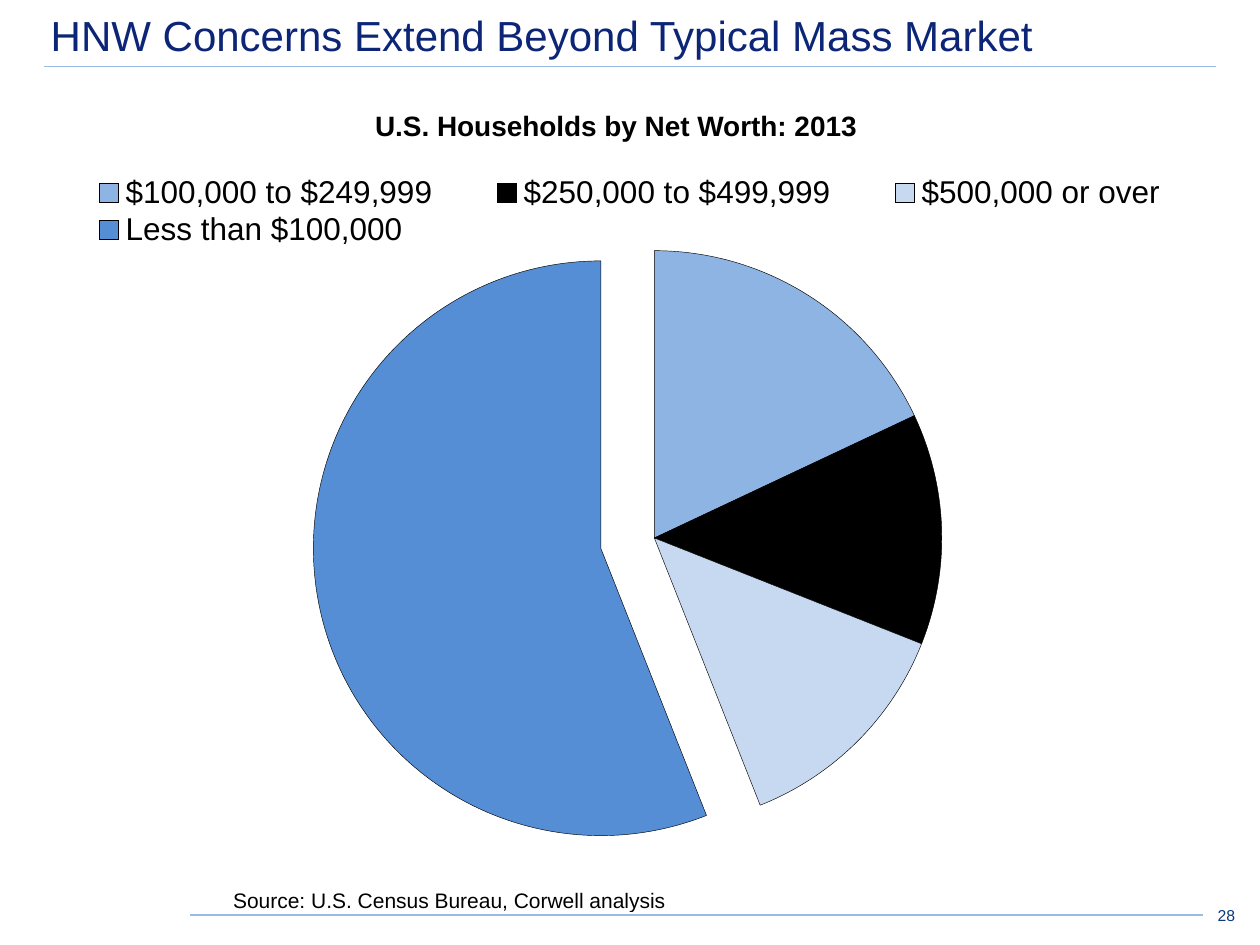
import pptx
import pptx.util
import pptx.chart.data
import pptx.dml.color
import pptx.enum.chart
import pptx.enum.shapes
import pptx.enum.text
import pptx.oxml
import pptx.oxml.ns

Pt = pptx.util.Pt
Align = pptx.enum.text.PP_ALIGN
Anchor = pptx.enum.text.MSO_ANCHOR
NS = pptx.oxml.ns.nsdecls("a")
CNS = pptx.oxml.ns.nsdecls("c")


def paint(hue):
    """Return the colour for a hex string."""
    return pptx.dml.color.RGBColor.from_string(hue)


def write(para, text, size, hue, bold=False):
    """Add one styled run to a paragraph."""
    run = para.add_run()
    run.text = text
    run.font.name = "Arial"
    run.font.size = Pt(size)
    run.font.bold = bold
    run.font.color.rgb = paint(hue)


def add_text(slide, box, text, size, hue, align, anchor, pad):
    """Add a wrapped text box with side and top insets."""
    frame = slide.shapes.add_textbox(*map(Pt, box)).text_frame
    frame.word_wrap = True
    frame.vertical_anchor = anchor
    frame.margin_left = frame.margin_right = Pt(pad)
    frame.margin_top = frame.margin_bottom = Pt(3.6)
    para = frame.paragraphs[0]
    para.alignment = align
    write(para, text, size, hue)


def add_rule(slide, left, right, top, width):
    """Add a level pale blue line."""
    kind = pptx.enum.shapes.MSO_CONNECTOR.STRAIGHT
    line = slide.shapes.add_connector(kind, Pt(left), Pt(top), Pt(right), Pt(top))
    line.line.color.rgb = paint("96BDE1")
    line.line.width = Pt(width)
    line._element.spPr.append(pptx.oxml.parse_xml(f"<a:effectLst {NS}/>"))


def add_strip(slide, box, text, size, align, bold=False):
    """Add a one-cell table with white borders."""
    table = slide.shapes.add_table(1, 1, *map(Pt, box)).table
    table.first_row = table.horz_banding = False
    cell = table.cell(0, 0)
    cell.margin_top = cell.margin_bottom = 0
    cell.margin_left = cell.margin_right = Pt(7.2)
    props = cell._tc.get_or_add_tcPr()
    for side in ("lnL", "lnR", "lnT", "lnB"):
        props.append(pptx.oxml.parse_xml(
            f'<a:{side} {NS} w="12700"><a:solidFill>'
            f'<a:srgbClr val="FFFFFF"/></a:solidFill></a:{side}>'))
    cell.fill.background()
    para = cell.text_frame.paragraphs[0]
    para.alignment = align
    para.line_spacing = Pt(18)
    write(para, text, size, "000000", bold)


def place(part, index, box, target=""):
    """Fix a chart part at a box given as shares of the chart."""
    for old in part.findall(pptx.oxml.ns.qn("c:layout")):
        part.remove(old)
    spots = "".join(f'<c:{key} val="{val}"/>' for key, val in zip("xywh", box))
    part.insert(index, pptx.oxml.parse_xml(
        f'<c:layout {CNS}><c:manualLayout>{target}<c:xMode val="edge"/>'
        f'<c:yMode val="edge"/>{spots}</c:manualLayout></c:layout>'))


def burst(series, index, share):
    """Pull one slice out of the pie."""
    point = series._element.get_or_add_dPt_for_point(index)
    mark = pptx.oxml.parse_xml(f'<c:explosion {CNS} val="{share}"/>')
    point.find(pptx.oxml.ns.qn("c:spPr")).addprevious(mark)


def add_pie(slide, box, slices):
    """Add the net worth pie from (label, value, hue) slices."""
    data = pptx.chart.data.CategoryChartData()
    data.categories = [label for label, _, _ in slices]
    data.add_series("Series 1", [value for _, value, _ in slices])
    kind = pptx.enum.chart.XL_CHART_TYPE.PIE
    chart = slide.shapes.add_chart(kind, *map(Pt, box), data).chart
    chart.has_title = False
    chart.font.name = "Arial"
    chart.font.size = Pt(6)
    chart.font.color.rgb = paint("000000")
    chart.has_legend = True
    legend = chart.legend
    legend.position = pptx.enum.chart.XL_LEGEND_POSITION.TOP
    legend.include_in_layout = False
    legend.font.name = "Arial"
    legend.font.size = Pt(18)
    legend.font.color.rgb = paint("000000")
    place(legend._element, 1, (0, 0.04, 1, 0.11))
    chart.plots[0].vary_by_categories = True
    series = chart.plots[0].series[0]
    for index, (_, _, hue) in enumerate(slices):
        style = series.points[index].format
        style.fill.solid()
        style.fill.fore_color.rgb = paint(hue)
        style.line.color.rgb = paint("000000")
        style.line.width = Pt(0.25)
    burst(series, len(slices) - 1, 19)
    place(chart._chartSpace.chart.plotArea, 0, (0.244, 0.152, 0.554, 0.831),
          '<c:layoutTarget val="inner"/>')


def main():
    """Build and save the slide."""
    deck = pptx.Presentation()
    deck.slide_width, deck.slide_height = Pt(720), Pt(540)
    slide = deck.slides.add_slide(deck.slide_layouts[6])
    add_rule(slide, 25.2, 694.8, 38.2, 0.5)
    add_rule(slide, 108.7, 687.6, 522.7, 1)
    add_text(slide, (25.4, 0, 669.6, 37.6),
             "HNW Concerns Extend Beyond Typical Mass Market",
             24, "0C2577", Align.LEFT, Anchor.BOTTOM, 3.6)
    add_strip(slide, (104.4, 63.4, 495.4, 18),
              "U.S. Households by Net Worth: 2013", 16, Align.CENTER, True)
    add_text(slide, (687.6, 511.2, 25.2, 23), "28",
             9, "0D387C", Align.RIGHT, Anchor.MIDDLE, 7.2)
    add_pie(slide, (25.5, 83.2, 668.9, 395.3), [
        ("$100,000 to $249,999", 18, "8EB4E3"),
        ("$250,000 to $499,999", 13, "000000"),
        ("$500,000 or over", 13, "C6D9F1"),
        ("Less than $100,000", 56, "558ED5"),
    ])
    add_strip(slide, (126, 503.6, 401.8, 18),
              "Source: U.S. Census Bureau, Corwell analysis", 12, Align.LEFT)
    deck.save("out.pptx")


if __name__ == "__main__":
    main()
